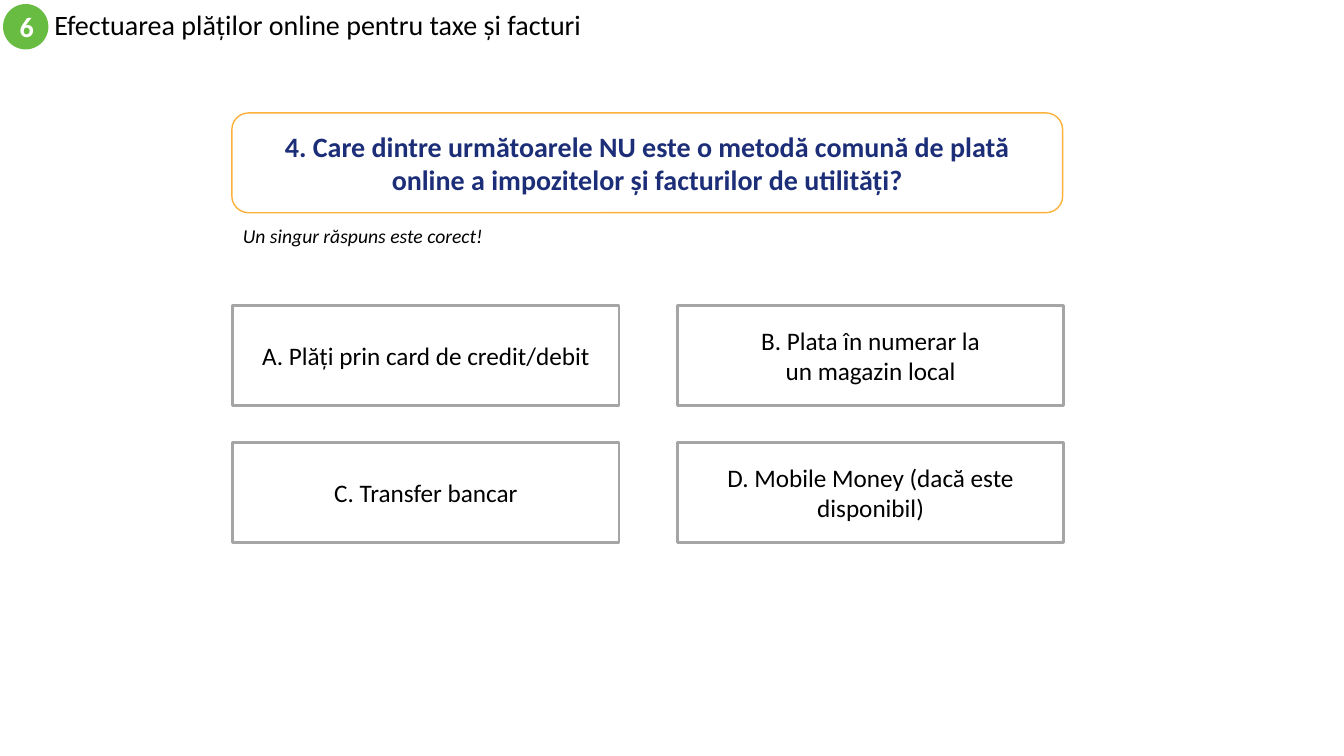
from pptx import Presentation
from pptx.dml.color import RGBColor
from pptx.enum.shapes import MSO_SHAPE as SHAPE
from pptx.enum.text import MSO_ANCHOR as ANCHOR, PP_ALIGN as ALIGN
from pptx.util import Inches, Pt

BLACK = RGBColor(0x00, 0x00, 0x00)
WHITE = RGBColor(0xFF, 0xFF, 0xFF)
GREEN = RGBColor(0x68, 0xBC, 0x42)
ORANGE = RGBColor(0xFC, 0xB1, 0x3A)
NAVY = RGBColor(0x1C, 0x2E, 0x78)
GREY = RGBColor(0xA5, 0xA5, 0xA5)


def write(box, lines, color, align=ALIGN.CENTER, anchor=ANCHOR.MIDDLE, **font_format):
    frame = box.text_frame
    frame.word_wrap = True
    frame.vertical_anchor = anchor
    frame.text = lines
    for paragraph in frame.paragraphs:
        paragraph.alignment = align
        paragraph.font.color.rgb = color
        for name, value in {"name": "Calibri", **font_format}.items():
            setattr(paragraph.font, name, value)


def add_panel(kind, left, top, width, height, fill, line=None, line_width=1):
    panel = slide.shapes.add_shape(
        kind, Inches(left), Inches(top), Inches(width), Inches(height))
    panel.shadow.inherit = False
    panel.fill.solid()
    panel.fill.fore_color.rgb = fill
    if line is None:
        panel.line.fill.background()
    else:
        panel.line.color.rgb = line
        panel.line.width = Pt(line_width)
    return panel


prs = Presentation()
prs.slide_width = Inches(13.33)
prs.slide_height = Inches(7.5)
slide = prs.slides.add_slide(prs.slide_layouts[6])

title = slide.shapes.add_textbox(Inches(0.44), Inches(0.04), Inches(8), Inches(0.45))
write(title, "Efectuarea plăților online pentru taxe și facturi", BLACK,
      align=ALIGN.LEFT, size=Pt(20))
title.text_frame.paragraphs[0].line_spacing = 0.9

chapter = add_panel(SHAPE.OVAL, 0.03, 0.04, 0.45, 0.45, GREEN)
write(chapter, "6", WHITE, size=Pt(20), bold=True)

question = add_panel(SHAPE.ROUNDED_RECTANGLE, 2.3, 1.12, 8.24, 0.99, WHITE, ORANGE)
write(question,
      "4. Care dintre următoarele NU este o metodă comună de plată online "
      "a impozitelor și facturilor de utilități?",
      NAVY, size=Pt(20), bold=True)

hint = slide.shapes.add_textbox(Inches(2.31), Inches(2.17), Inches(2.61), Inches(0.34))
write(hint, "Un singur răspuns este corect!", BLACK,
      align=ALIGN.LEFT, anchor=ANCHOR.TOP, size=Pt(14), italic=True)

answers = [
    "Α. Plăți prin card de credit/debit",
    "B. Plata în numerar la\nun magazin local",
    "C. Transfer bancar",
    "D. Mobile Money (dacă este disponibil)",
]
for index, answer in enumerate(answers):
    row, column = divmod(index, 2)
    choice = add_panel(SHAPE.RECTANGLE, 2.31 + 4.41 * column, 3.03 + 1.36 * row,
                       3.83, 0.99, WHITE, GREY, 2)
    write(choice, answer, BLACK, size=Pt(18))

prs.save("out.pptx")
